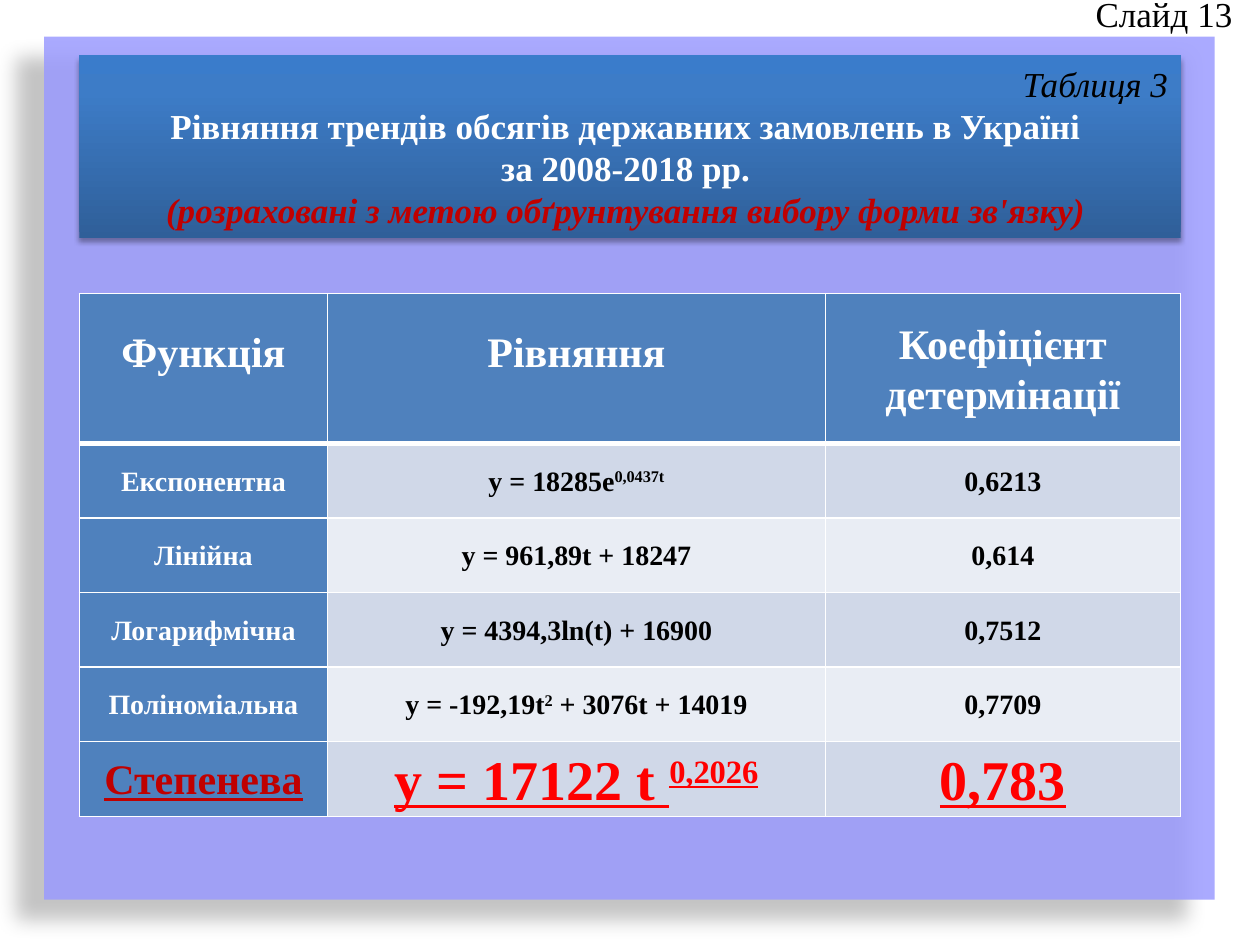
from lxml import etree
from pptx import Presentation
from pptx.dml.color import RGBColor
from pptx.enum.shapes import MSO_SHAPE
from pptx.enum.text import MSO_ANCHOR, MSO_AUTO_SIZE, PP_ALIGN
from pptx.oxml import parse_xml
from pptx.oxml.ns import qn
from pptx.util import Inches, Pt

RECT = MSO_SHAPE.RECTANGLE
MIDDLE = MSO_ANCHOR.MIDDLE
GROW = MSO_AUTO_SIZE.SHAPE_TO_FIT_TEXT
CENTER, RIGHT = PP_ALIGN.CENTER, PP_ALIGN.RIGHT
FONT = "Times New Roman"
NS = 'xmlns:a="http://schemas.openxmlformats.org/drawingml/2006/main"'

BLACK = RGBColor(0x00, 0x00, 0x00)
WHITE = RGBColor(0xFF, 0xFF, 0xFF)
LILAC = RGBColor(0x99, 0x99, 0xFF)
BLUE = RGBColor(0x4F, 0x81, 0xBD)
DARK = RGBColor(0xC0, 0x00, 0x00)
RED = RGBColor(0xFF, 0x00, 0x00)
BANDS = RGBColor(0xD0, 0xD8, 0xE8), RGBColor(0xE9, 0xED, 0xF4)
DEPTHS = ((0, RGBColor(0x2F, 0x5F, 0x99)), (80, RGBColor(0x3D, 0x7C, 0xC7)),
          (100, RGBColor(0x3A, 0x7C, 0xCB)))

HEADS = "Функція", "Рівняння", "Коефіцієнт детермінації"
ROWS = (
    ("Експонентна", "y = 18285e|0,0437t", "0,6213"),
    ("Лінійна", "y = 961,89t + 18247", "0,614"),
    ("Логарифмічна", "y = 4394,3ln(t) + 16900", "0,7512"),
    ("Поліноміальна", "y = -192,19t|2| + 3076t + 14019", "0,7709"),
    ("Степенева", "y = 17122 t |0,2026", "0,783"),
)


def put(para, text, size=20, color=BLACK, bold=False, italic=False,
        under=False, align=CENTER, space=1.0):
    """Write text; a newline breaks the line and bars enclose superscripts."""
    para.alignment = align
    para.line_spacing = space
    for row, line in enumerate(text.split("\n")):
        if row:
            para.add_line_break()
        for spot, part in enumerate(line.split("|")):
            run = para.add_run()
            run.text = part
            font = run.font
            font.name, font.size, font.color.rgb = FONT, Pt(size), color
            font.bold, font.italic, font.underline = bold, italic, under
            if spot % 2:
                run._r.get_or_add_rPr().set("baseline", "30000")


def place(shape, box):
    """Move a shape to a box given in inches."""
    shape.left, shape.top, shape.width, shape.height = map(Inches, box)


def shade(shape, alpha, blur, dist, angle):
    """Give a shape an outer shadow."""
    shape._element.spPr.append(parse_xml(
        f'<a:effectLst {NS}><a:outerShdw blurRad="{Pt(blur)}" '
        f'dist="{Pt(dist)}" dir="{angle * 60000}" algn="ctr" rotWithShape="0">'
        f'<a:srgbClr val="{BLACK}"><a:alpha val="{alpha * 1000}"/>'
        '</a:srgbClr></a:outerShdw></a:effectLst>'))


def add_panel(slide, box):
    """Lay the translucent panel behind everything else."""
    panel = slide.shapes.add_shape(RECT, *map(Inches, box))
    panel.fill.solid()
    panel.fill.fore_color.rgb = LILAC
    tint = panel._element.spPr.find(f".//{qn('a:srgbClr')}")
    etree.SubElement(tint, qn("a:alpha"), val="83000")
    panel.line.fill.background()
    shade(panel, 28, 11.8, 19.7, 141)
    slide.shapes._spTree.insert(2, panel._element)


def add_title(slide, box):
    """Fill the title placeholder with the table's heading."""
    title = slide.shapes.title
    place(title, box)
    title.fill.gradient()
    title.fill.gradient_angle = 90
    stops = title._element.spPr.find(f".//{qn('a:gsLst')}")
    for stop in list(stops):
        stops.remove(stop)
    for spot, color in DEPTHS:
        stop = etree.SubElement(stops, qn("a:gs"), pos=str(spot * 1000))
        etree.SubElement(stop, qn("a:srgbClr"), val=str(color))
    title.line.fill.background()
    shade(title, 35, 3.1, 1.8, 90)
    frame = title.text_frame
    frame.word_wrap, frame.auto_size = True, GROW
    frame.vertical_anchor = MIDDLE
    put(frame.paragraphs[0], "Таблиця 3", italic=True, align=RIGHT)
    put(frame.add_paragraph(),
        "Рівняння трендів обсягів державних замовлень в Україні \n"
        "за 2008-2018 рр. ", color=WHITE, bold=True)
    put(frame.add_paragraph(),
        "(розраховані з метою обґрунтування вибору форми зв'язку) ",
        color=DARK, bold=True, italic=True)


def add_label(slide, box):
    """Add the slide number label."""
    frame = slide.shapes.add_textbox(*map(Inches, box)).text_frame
    frame.word_wrap, frame.auto_size = True, GROW
    put(frame.paragraphs[0], "Слайд 13", align=RIGHT)


def fill_cell(cell, text, fill, base=1, **style):
    """Set one cell's borders, fill, margins and text."""
    props = cell._tc.get_or_add_tcPr()
    for side in "LRTB":
        width = Pt(base if side == "B" else 1)
        props.append(parse_xml(
            f'<a:ln{side} {NS} w="{width}"><a:solidFill>'
            f'<a:srgbClr val="{WHITE}"/></a:solidFill></a:ln{side}>'))
    cell.fill.solid()
    cell.fill.fore_color.rgb = fill
    cell.margin_left = cell.margin_right = Inches(0.07)
    cell.margin_top = cell.margin_bottom = 0
    cell.vertical_anchor = MIDDLE
    put(cell.text_frame.paragraphs[0], text, bold=True, space=1.07, **style)


def add_table(slide, box):
    """Build the table of trend equations, with the best one in red."""
    count = len(ROWS)
    table = slide.shapes.add_table(
        count + 1, len(HEADS), *map(Inches, box)).table
    for col, width in zip(table.columns, (1.97, 3.95, 2.82)):
        col.width = Inches(width)
    head = 1.19
    for row in table.rows:
        row.height = Inches((box[3] - head) / count)
    table.rows[0].height = Inches(head)
    for col, text in enumerate(HEADS):
        cell = table.cell(0, col)
        fill_cell(cell, text, BLUE, base=3, size=24, color=WHITE)
        if col < 2:
            cell.margin_bottom = Inches(0.27)
    for row, texts in enumerate(ROWS):
        best = row == count - 1
        for col, text in enumerate(texts):
            cell = table.cell(row + 1, col)
            if col:
                fill_cell(cell, text, BANDS[row % 2], under=best,
                          size=32 if best else 16,
                          color=RED if best else BLACK)
            else:
                fill_cell(cell, text, BLUE, under=best,
                          size=24 if best else 16,
                          color=DARK if best else WHITE)


def main():
    """Build and save the slide."""
    deck = Presentation()
    deck.slide_width, deck.slide_height = Inches(10), Inches(7.5)
    slide = deck.slides.add_slide(deck.slide_layouts[5])
    add_panel(slide, (0.35, 0.29, 9.29, 6.85))
    add_title(slide, (0.63, 0.44, 8.74, 1.45))
    add_label(slide, (8.34, -0.11, 1.54, 0.44))
    add_table(slide, (0.63, 2.33, 8.74, 4.15))
    deck.save("out.pptx")


if __name__ == "__main__":
    main()
